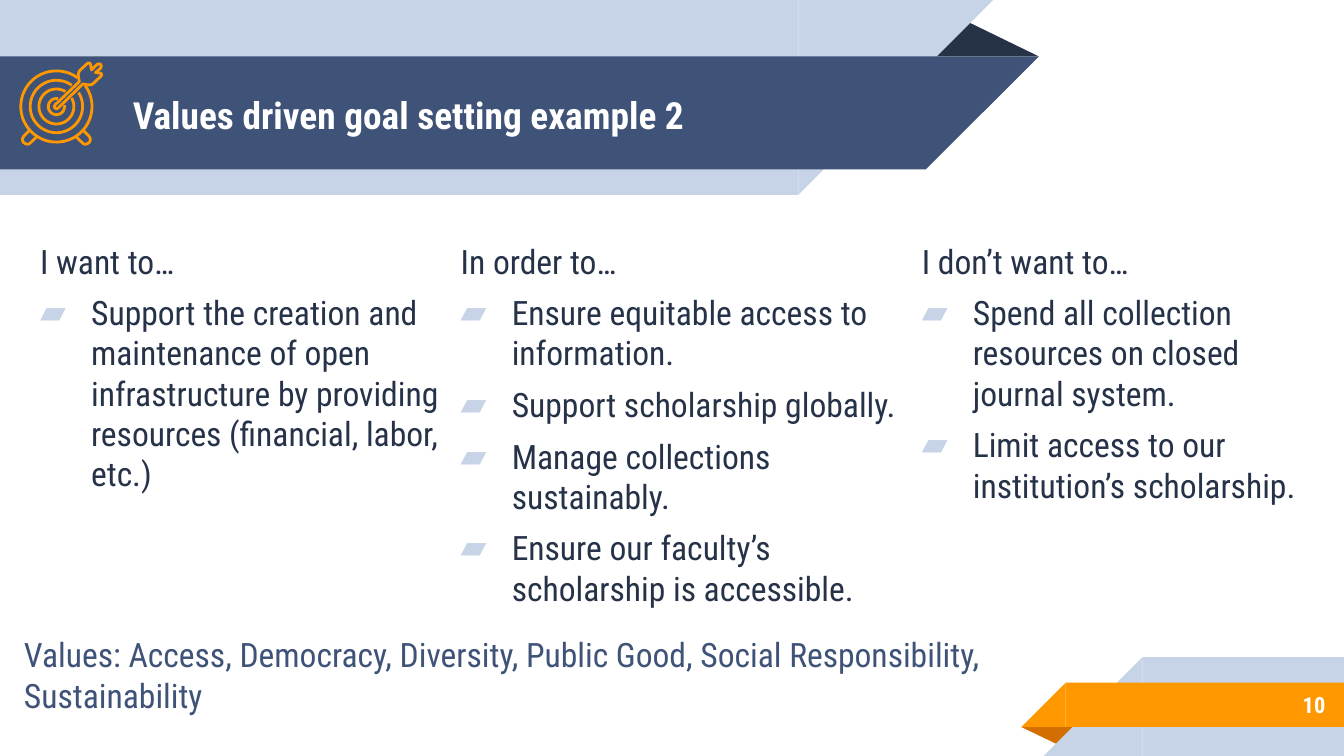
from math import cos, radians, sin

from lxml.etree import SubElement
from pptx import Presentation
from pptx.dml.color import RGBColor as RGB
from pptx.enum.shapes import MSO_SHAPE as SHAPE
from pptx.enum.text import MSO_ANCHOR as ANCHOR, PP_ALIGN as ALIGN
from pptx.oxml.ns import qn
from pptx.util import Inches, Pt

COLORS = {"pale": "C7D3E6", "blue": "3F5378", "navy": "263248",
          "orange": "FF9800", "rust": "D26F00", "white": "FFFFFF"}
FONT = "Roboto Condensed"

prs = Presentation()
prs.slide_width, prs.slide_height = Inches(10), Inches(5.625)
s = prs.slides.add_slide(prs.slide_layouts[6])

# Grid of 100 columns by 56.25 rows
COL = prs.slide_width / 100
ROW = prs.slide_height / 56.25


def add_block(kind, x, y, w, h, color, flip=None, rotation=0):
    sp = s.shapes.add_shape(kind, int(x * COL), int(y * ROW), int(w * COL), int(h * ROW))
    sp.shadow.inherit = False
    sp.fill.solid()
    sp.fill.fore_color.rgb = RGB.from_string(COLORS[color])
    sp.line.fill.background()
    sp.rotation = rotation
    if flip:
        sp._element.spPr.find(qn("a:xfrm")).set(flip, "1")
    if kind == SHAPE.ISOSCELES_TRIANGLE:
        sp.adjustments[0] = 0.324
    return sp


def add_text(paragraphs, x, y, w, h, size=18, color="navy", bold=False, align=ALIGN.LEFT,
             anchor=ANCHOR.TOP, inset=1, before=0, indent=0, bullets=False):
    """Write paragraphs in a box; with bullets, all but the first are list items."""
    sp = s.shapes.add_textbox(int(x * COL), int(y * ROW), int(w * COL), int(h * ROW))
    tf = sp.text_frame
    tf.word_wrap = True
    tf.vertical_anchor = anchor
    tf.margin_left = tf.margin_right = int(COL)
    tf.margin_top = tf.margin_bottom = int(inset * ROW)
    for i, line in enumerate(paragraphs):
        p = tf.add_paragraph() if i else tf.paragraphs[0]
        p.alignment = align
        p.space_before = Pt(before)
        r = p.add_run()
        r.text = line
        r.font.name, r.font.size, r.font.bold = FONT, Pt(size), bold
        r.font.color.rgb = RGB.from_string(COLORS[color])
        pPr = p._p.get_or_add_pPr()
        pPr.set("marL", str(int(indent * COL)))
        if bullets and i:
            pPr.set("marL", str(int(5 * COL)))
            pPr.set("indent", str(int(-3.8 * COL)))
            bullet_color = SubElement(pPr, qn("a:buClr"))
            SubElement(bullet_color, qn("a:srgbClr"), val=COLORS["pale"])
            SubElement(pPr, qn("a:buFont"), typeface=FONT)
            SubElement(pPr, qn("a:buChar"), char="▰")
    return sp


# Header ribbon: a fold, then bands with slanted right ends
add_block(SHAPE.ISOSCELES_TRIANGLE, 68.8, 1.4, 8.5, 2.8, "navy")
for y, w, h, color in [(0, 59.4, 14.5, "pale"), (4.2, 68.9, 8.4, "blue")]:
    add_block(SHAPE.RECTANGLE, 0, y, w, h, color)
    add_block(SHAPE.RIGHT_TRIANGLE, w, y, h, h, color, flip="flipV")

# Footer ribbon: a fold, then bands with slanted left ends
add_block(SHAPE.ISOSCELES_TRIANGLE, 76, 54.1, 4.3, 1.4, "rust", rotation=180)
for x, y, h, color in [(85, 48.9, 7.35, "pale"), (79.3, 50.8, 3.3, "orange")]:
    add_block(SHAPE.RECTANGLE, x, y, 100 - x, h, color)
    add_block(SHAPE.RIGHT_TRIANGLE, x - h, y, h, h, color, flip="flipH")

# Title
add_text(["Values driven goal setting example 2"], 8.9, 4.3, 57.5, 8.4,
         size=20, color="white", bold=True, anchor=ANCHOR.MIDDLE)

# Three columns
columns = [
    (0.8, 33.3, ["I want to…",
                 "Support the creation and maintenance of open infrastructure "
                 "by providing resources (financial, labor, etc.)"]),
    (32.1, 37.4, ["In order to…",
                  "Ensure equitable access to information.",
                  "Support scholarship globally.",
                  "Manage collections sustainably.",
                  "Ensure our faculty’s scholarship is accessible."]),
    (66.4, 31.1, ["I don’t want to…",
                  "Spend all collection resources on closed journal system.",
                  "Limit access to our institution’s scholarship."]),
]
for x, w, lines in columns:
    add_text(lines, x, 16.9, w, 29.6, before=6, indent=1.2, bullets=True)

# Page number and values
add_text(["10"], 83.3, 50.7, 16.3, 3.5, size=12, color="white", bold=True,
         align=ALIGN.RIGHT, anchor=ANCHOR.MIDDLE)
add_text(["Values: Access, Democracy, Diversity, Public Good, Social Responsibility, "
          "Sustainability"], 0.8, 46.7, 82.5, 7.1, color="blue", inset=0.5)

# Target icon: rings with a gap for the dart (radius, gap start, gap end in degrees)
CX, CY = 4.2, 7.93
outlines = []
for radius, gap_start, gap_end in [(2.65, 36, 54), (1.95, 32, 54), (1.3, 29, 59), (0.6, 10, 79)]:
    steps = 60
    sweep = 360 - gap_end + gap_start
    angles = [radians(gap_end + sweep * i / steps) for i in range(steps + 1)]
    outlines.append(([(CX + radius * cos(a), CY - radius * sin(a)) for a in angles], False))

# Feet, mirrored about the centre of the target
foot = [(2.2, 9.7), (1.8, 10.1), (1.68, 10.3), (1.68, 10.45), (1.75, 10.6), (1.9, 10.7),
        (2.05, 10.74), (2.2, 10.7), (2.3, 10.6), (2.72, 10.2)]
outlines.append((foot, False))
outlines.append(([(2 * CX - x, y) for x, y in foot], False))

# Dart
dart = [(7.5, 5.45), (7.1, 5.4), (7.48, 5.07), (7.54, 4.93), (7.5, 4.8), (7.38, 4.75),
        (7.22, 4.8), (6.8, 5.2), (6.74, 4.8), (6.67, 4.68), (6.52, 4.7), (5.95, 5.23),
        (5.85, 5.4), (5.82, 5.6), (5.9, 6.08), (4.1, 7.8), (4.03, 7.93), (4.1, 8.05),
        (4.22, 8.1), (4.33, 8.03), (6.16, 6.25), (6.6, 6.32), (6.8, 6.3), (6.95, 6.2),
        (7.53, 5.65), (7.56, 5.52)]
outlines.append((dart, True))

icon = s.shapes.add_group_shape()
for points, closed in outlines:
    points = [(x * COL, y * ROW) for x, y in points]
    outline = icon.shapes.build_freeform(*points[0])
    outline.add_line_segments(points[1:], close=closed)
    sp = outline.convert_to_shape()
    sp.shadow.inherit = False
    sp.fill.background()
    sp.line.color.rgb = RGB.from_string(COLORS["orange"])
    sp.line.width = Pt(1.5)

prs.save("out.pptx")
